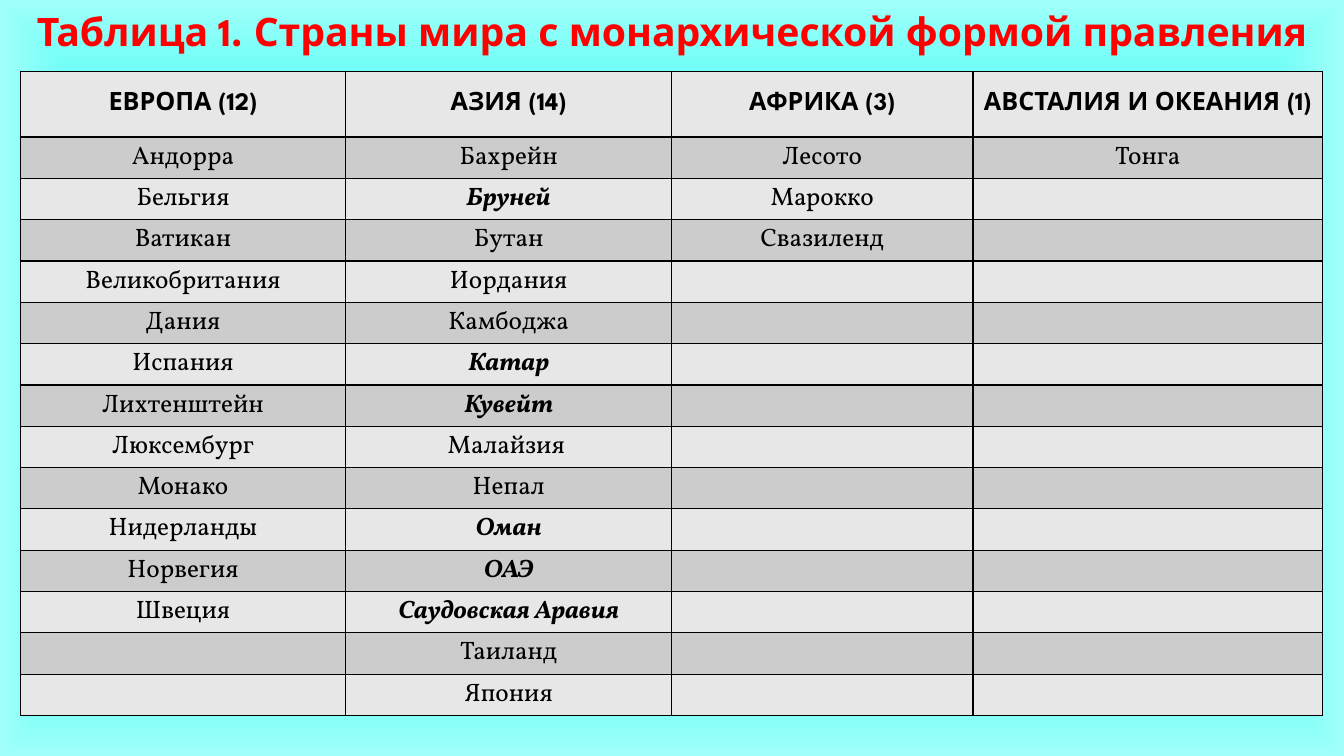
import pptx
import pptx.dml.color
import pptx.enum.text
import pptx.oxml
import pptx.oxml.ns
import pptx.util
from itertools import zip_longest

Inches = pptx.util.Inches
RGBColor = pptx.dml.color.RGBColor

TITLE = "Таблица 1. Страны мира с монархической формой правления"
REGIONS = {
    "ЕВРОПА (12)": [
        "Андорра", "Бельгия", "Ватикан", "Великобритания", "Дания", "Испания",
        "Лихтенштейн", "Люксембург", "Монако", "Нидерланды", "Норвегия", "Швеция",
    ],
    "АЗИЯ (14)": [
        "Бахрейн", "Бруней", "Бутан", "Иордания", "Камбоджа", "Катар", "Кувейт",
        "Малайзия ", "Непал", "Оман", "ОАЭ", "Саудовская Аравия", "Таиланд", "Япония",
    ],
    "АФРИКА (3)": ["Лесото", "Марокко", "Свазиленд"],
    "АВСТАЛИЯ И ОКЕАНИЯ (1)": ["Тонга"],
}
EMPHASIZED = {"Бруней", "Катар", "Кувейт", "Оман", "ОАЭ", "Саудовская Аравия"}

COLUMN_WIDTHS = [3.23, 3.23, 2.99, 3.47]
HEADER_HEIGHT, ROW_HEIGHT = 0.65, 0.41
HEADING_FONT, BODY_FONT = "League Spartan", "Vollkorn"
RED = RGBColor(0xFF, 0x00, 0x00)
BLACK = RGBColor(0x00, 0x00, 0x00)
BAND_FILLS = [RGBColor(0xE7, 0xE7, 0xE7), RGBColor(0xCC, 0xCC, 0xCC)]
GLOW_STOPS = [(0, "EFFFFE"), (74, "73FFF7"), (83, "73FFF7"), (100, "A1FFFA")]


def paint_background(slide):
    """Fill the background with a gradient that follows the slide outline."""
    slide.background.fill.solid()
    solid = slide.element.find(".//" + pptx.oxml.ns.qn("a:solidFill"))
    stops = "".join(
        f'<a:gs pos="{position * 1000}"><a:srgbClr val="{color}"/></a:gs>'
        for position, color in GLOW_STOPS
    )
    gradient = pptx.oxml.parse_xml(
        f'<a:gradFill {pptx.oxml.ns.nsdecls("a")} rotWithShape="1">'
        f'<a:gsLst>{stops}</a:gsLst><a:path path="shape">'
        '<a:fillToRect l="50000" t="50000" r="50000" b="50000"/></a:path></a:gradFill>'
    )
    solid.getparent().replace(solid, gradient)


def write_centered(frame, text, font, size, color, bold, italic=False):
    para = frame.paragraphs[0]
    para.alignment = pptx.enum.text.PP_ALIGN.CENTER
    span = para.add_run()
    span.text = text
    span.font.name = font
    span.font.size = pptx.util.Pt(size)
    span.font.color.rgb = color
    span.font.bold = bold
    span.font.italic = italic


def outline_cell(cell):
    properties = cell._tc.get_or_add_tcPr()
    for index, side in enumerate(("lnL", "lnR", "lnT", "lnB")):
        border = pptx.oxml.parse_xml(
            f'<a:{side} {pptx.oxml.ns.nsdecls("a")} w="12700"><a:solidFill>'
            f'<a:srgbClr val="{BLACK}"/></a:solidFill></a:{side}>'
        )
        properties.insert(index, border)


def add_title(slide):
    box = slide.shapes.add_textbox(0, Inches(0.02), Inches(13.33), Inches(0.57))
    box.text_frame.word_wrap = True
    box.text_frame.auto_size = pptx.enum.text.MSO_AUTO_SIZE.SHAPE_TO_FIT_TEXT
    write_centered(box.text_frame, TITLE, HEADING_FONT, 28, RED, True)


def add_country_table(slide):
    rows = [tuple(REGIONS), *zip_longest(*REGIONS.values(), fillvalue="")]
    heights = [HEADER_HEIGHT] + [ROW_HEIGHT] * (len(rows) - 1)
    table = slide.shapes.add_table(
        len(rows), len(COLUMN_WIDTHS), Inches(0.2), Inches(0.71),
        Inches(sum(COLUMN_WIDTHS)), Inches(sum(heights)),
    ).table
    for column, width in zip(table.columns, COLUMN_WIDTHS):
        column.width = Inches(width)
    for row_index, (names, height) in enumerate(zip(rows, heights)):
        table.rows[row_index].height = Inches(height)
        is_header = row_index == 0
        for column_index, name in enumerate(names):
            cell = table.cell(row_index, column_index)
            cell.margin_left = cell.margin_right = Inches(0.05)
            cell.margin_top = cell.margin_bottom = 0
            cell.vertical_anchor = pptx.enum.text.MSO_ANCHOR.MIDDLE
            cell.fill.solid()
            cell.fill.fore_color.rgb = BAND_FILLS[row_index % 2]
            outline_cell(cell)
            if name:
                emphasized = name in EMPHASIZED
                write_centered(
                    cell.text_frame, name, HEADING_FONT if is_header else BODY_FONT,
                    18, BLACK, is_header or emphasized, emphasized,
                )


def main():
    deck = pptx.Presentation()
    deck.slide_width, deck.slide_height = Inches(13.33), Inches(7.5)
    slide = deck.slides.add_slide(deck.slide_layouts[6])
    paint_background(slide)
    add_title(slide)
    add_country_table(slide)
    deck.save("out.pptx")


if __name__ == "__main__":
    main()
